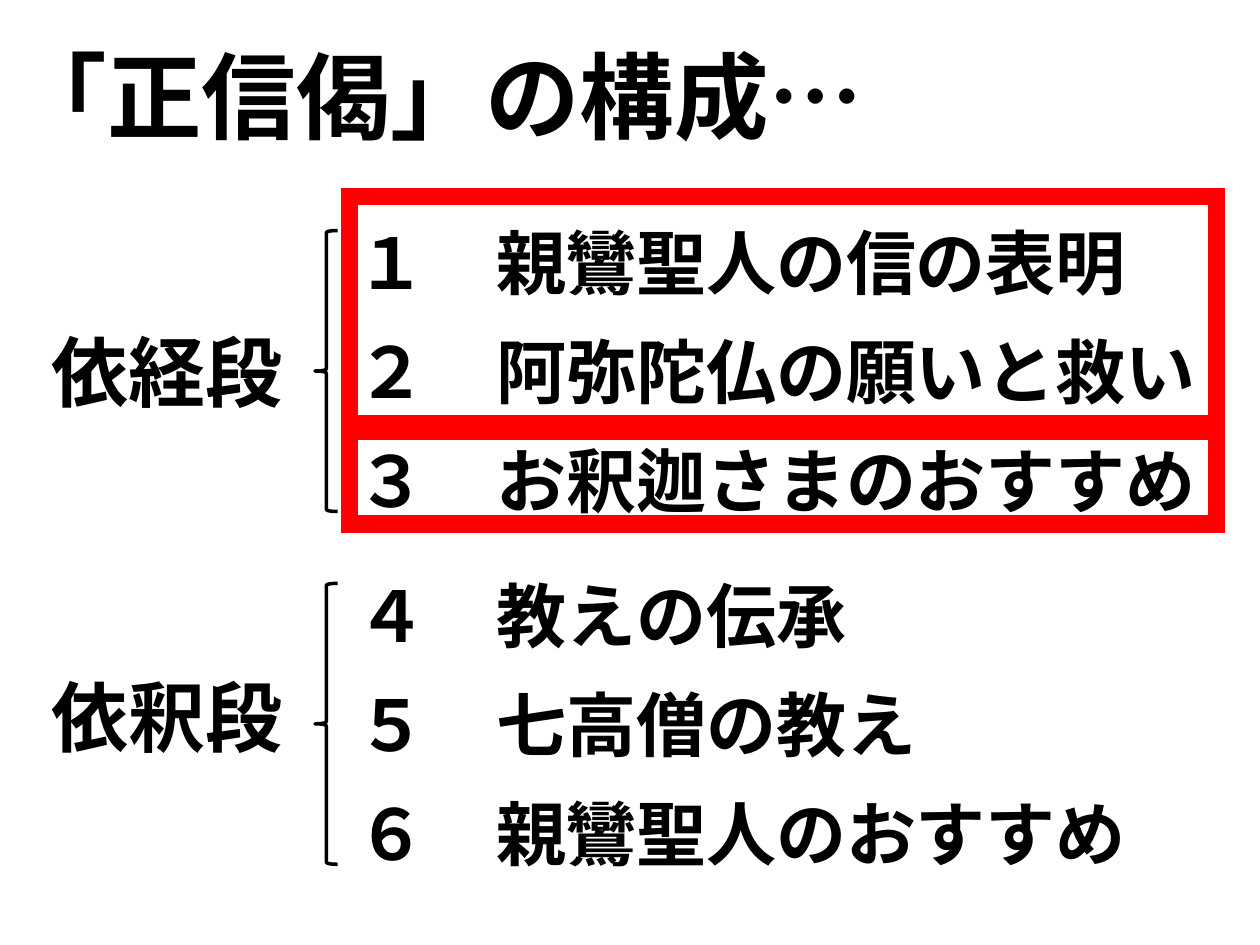
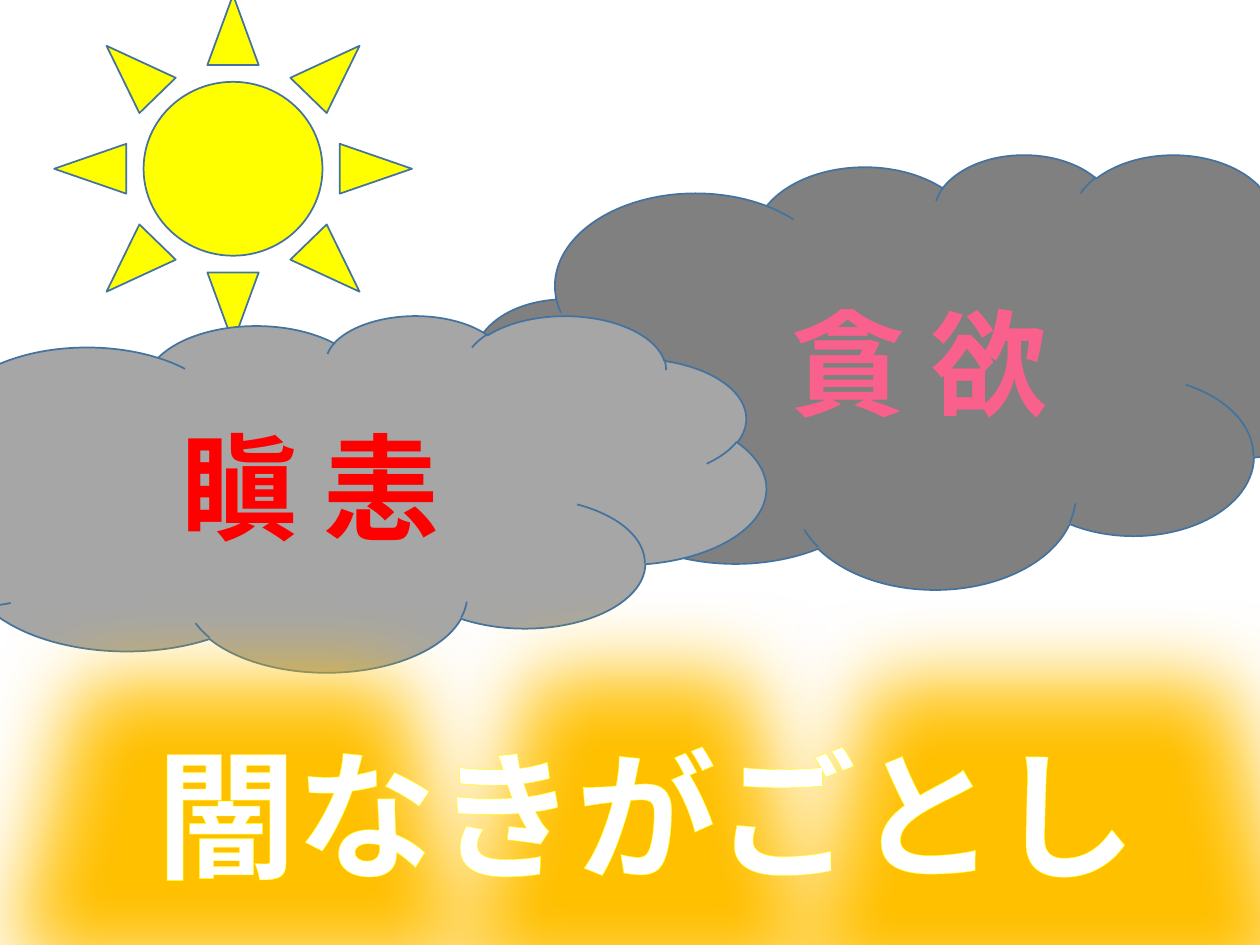
from collections import namedtuple

from lxml import etree
from pptx import Presentation
from pptx.dml.color import RGBColor
from pptx.enum.lang import MSO_LANGUAGE_ID
from pptx.enum.shapes import MSO_SHAPE
from pptx.enum.text import MSO_ANCHOR, MSO_AUTO_SIZE, PP_ALIGN
from pptx.oxml.ns import qn
from pptx.util import Inches, Pt

# Shared look
BLACK = RGBColor(0x00, 0x00, 0x00)
WHITE = RGBColor(0xFF, 0xFF, 0xFF)
RED = RGBColor(0xFF, 0x00, 0x00)
PINK = RGBColor(0xFA, 0x60, 0x8C)
YELLOW = RGBColor(0xFF, 0xFF, 0x00)
GOLD = RGBColor(0xFF, 0xC0, 0x00)
DARK_GREY = RGBColor(0x80, 0x80, 0x80)
LIGHT_GREY = RGBColor(0xA6, 0xA6, 0xA6)
OUTLINE_BLUE = RGBColor(0x43, 0x73, 0x9E)
LATIN_FONT = "Calibri"
JAPANESE_FONT = "Noto Sans CJK JP"

BRACE, RECTANGLE = MSO_SHAPE.LEFT_BRACE, MSO_SHAPE.RECTANGLE
SUN, CLOUD, TRAPEZOID = MSO_SHAPE.SUN, MSO_SHAPE.CLOUD, MSO_SHAPE.TRAPEZOID
LEFT, CENTER = PP_ALIGN.LEFT, PP_ALIGN.CENTER
MIDDLE = MSO_ANCHOR.MIDDLE
NO_AUTOFIT = MSO_AUTO_SIZE.NONE
JAPANESE = MSO_LANGUAGE_ID.JAPANESE

# Grid of 100 columns and 75 rows
SLIDE_WIDTH, SLIDE_HEIGHT = Inches(10), Inches(7.5)
COLUMN, ROW = SLIDE_WIDTH / 100, SLIDE_HEIGHT / 75
TITLE_LAYOUT, TWO_LIST_LAYOUT = 5, 3
Box = namedtuple("Box", "left top width height")


def emu(box):
    return (round(box.left * COLUMN), round(box.top * ROW),
            round(box.width * COLUMN), round(box.height * ROW))


def inside(outer, left, top, width, height):
    """Box at an offset from the corner of an outer box."""
    return Box(outer.left + left, outer.top + top, width, height)


def move(shape, box):
    shape.left, shape.top, shape.width, shape.height = emu(box)


def style_run(run, size, color, font=JAPANESE_FONT):
    run.font.size, run.font.bold, run.font.name = Pt(size), True, font
    run.font.color.rgb = color
    run.font.language_id = JAPANESE
    properties = run._r.get_or_add_rPr()
    east_asian = etree.Element(qn("a:ea"), typeface=JAPANESE_FONT)
    properties.find(qn("a:latin")).addnext(east_asian)


def write(shape, text, size, color, font=JAPANESE_FONT, align=LEFT):
    """Fill a shape with bold lines, centred vertically."""
    frame = shape.text_frame
    frame.text = text
    frame.word_wrap = True
    frame.auto_size = NO_AUTOFIT
    frame.vertical_anchor = MIDDLE
    for paragraph in frame.paragraphs:
        paragraph.alignment = align
        for run in paragraph.runs:
            style_run(run, size, color, font)


def add_figure(slide, kind, box, fill=None, line=OUTLINE_BLUE, weight=1):
    shape = slide.shapes.add_shape(kind, *emu(box))
    shape.shadow.inherit = False
    if fill is None:
        shape.fill.background()
    else:
        shape.fill.solid()
        shape.fill.fore_color.rgb = fill
    shape.line.color.rgb = line
    shape.line.width = Pt(weight)
    return shape


def add_title(slide, box, text, size, color=BLACK):
    title = slide.shapes.title
    move(title, box)
    write(title, text, size, color)
    return title


def add_section(slide, box, label, label_top, items, list_placeholder):
    """Section label, brace and its list of three items."""
    label_box = slide.shapes.add_textbox(*emu(inside(box, 3.1, label_top, 21, 8.4)))
    write(label_box, label, 44, BLACK)
    add_figure(slide, BRACE, inside(box, 25, 1.4, 1.8, 22.3), line=BLACK, weight=2)

    move(list_placeholder, inside(box, 27.3, 0, box.width - 27.3, box.height))
    write(list_placeholder, "\n".join(items), 40, BLACK, LATIN_FONT)
    for index, paragraph in enumerate(list_placeholder.text_frame.paragraphs):
        paragraph.line_spacing = 1.0
        paragraph.space_before = Pt(14.4 if index else 0)
        properties = paragraph._p.get_or_add_pPr()
        properties.set("marL", "0")
        properties.set("indent", "0")
        etree.SubElement(properties, qn("a:buNone"))


def add_highlight(slide, box):
    frame = add_figure(slide, RECTANGLE, box, line=RED, weight=10)
    line = frame._element.spPr.find(qn("a:ln"))
    etree.SubElement(line, qn("a:miter"), lim="800000")


def add_cloud(slide, box, text, fill, color):
    cloud = add_figure(slide, CLOUD, box, fill)
    write(cloud, text, 66, color, LATIN_FONT, CENTER)
    cloud.text_frame.margin_left = Inches(0.51)


def add_glow(slide, box):
    """Trapezoid of light with soft edges."""
    glow = add_figure(slide, TRAPEZOID, box, GOLD)
    effects = glow._element.spPr.find(qn("a:effectLst"))
    etree.SubElement(effects, qn("a:softEdge"), rad=str(Inches(0.69).emu))


def add_text_outline(run, color, weight):
    line = etree.Element(qn("a:ln"), w=str(Pt(weight).emu))
    fill = etree.SubElement(line, qn("a:solidFill"))
    etree.SubElement(fill, qn("a:srgbClr"), val=str(color))
    run._r.get_or_add_rPr().insert(0, line)


def build_structure_slide(presentation):
    slide = presentation.slides.add_slide(presentation.slide_layouts[TWO_LIST_LAYOUT])
    add_title(slide, Box(0, 2.5, 73.6, 10.1), "「正信偈」の構成…", 54)
    sections = [
        ("依経段", 8.3, ["１　親鸞聖人の信の表明", "２　阿弥陀仏の願いと救い",
                      "３　お釈迦さまのおすすめ"]),
        ("依釈段", 7.7, ["４　教えの伝承", "５　七高僧の教え", "６　親鸞聖人のおすすめ"]),
    ]
    for index, (label, label_top, items) in enumerate(sections):
        box = Box(0, 16.9 + 28 * index, 100, 25)
        add_section(slide, box, label, label_top, items, slide.placeholders[index + 1])

    # Frames around items 1 and 2, and item 3
    for top, height in ((15.6, 18.6), (33.6, 8)):
        add_highlight(slide, Box(27.75, top, 68.8, height))


def build_light_slide(presentation):
    slide = presentation.slides.add_slide(presentation.slide_layouts[TITLE_LAYOUT])

    # Sun behind two clouds
    add_figure(slide, SUN, Box(4.3, -0.4, 28.4, 27.6), YELLOW)
    add_cloud(slide, Box(37.7, 12.2, 71.4, 34.5), "貪 欲", DARK_GREY, PINK)
    add_cloud(slide, Box(-10.6, 25, 71.4, 28.3), "瞋 恚", LIGHT_GREY, RED)

    # Light below the clouds
    for box in (Box(-9.4, 47.3, 57, 36.1), Box(25.9, 46.7, 49.6, 38),
                Box(52.8, 47.3, 60.8, 38)):
        add_glow(slide, box)

    # Title in front of the light
    title = add_title(slide, Box(11.4, 57.2, 81.5, 14.5), "闇なきがごとし", 80, WHITE)
    add_text_outline(title.text_frame.paragraphs[0].runs[0], YELLOW, 0.75)
    slide.shapes._spTree.append(title._element)


def main():
    presentation = Presentation()
    presentation.slide_width, presentation.slide_height = SLIDE_WIDTH, SLIDE_HEIGHT
    build_structure_slide(presentation)
    build_light_slide(presentation)
    presentation.save("out.pptx")


if __name__ == "__main__":
    main()
